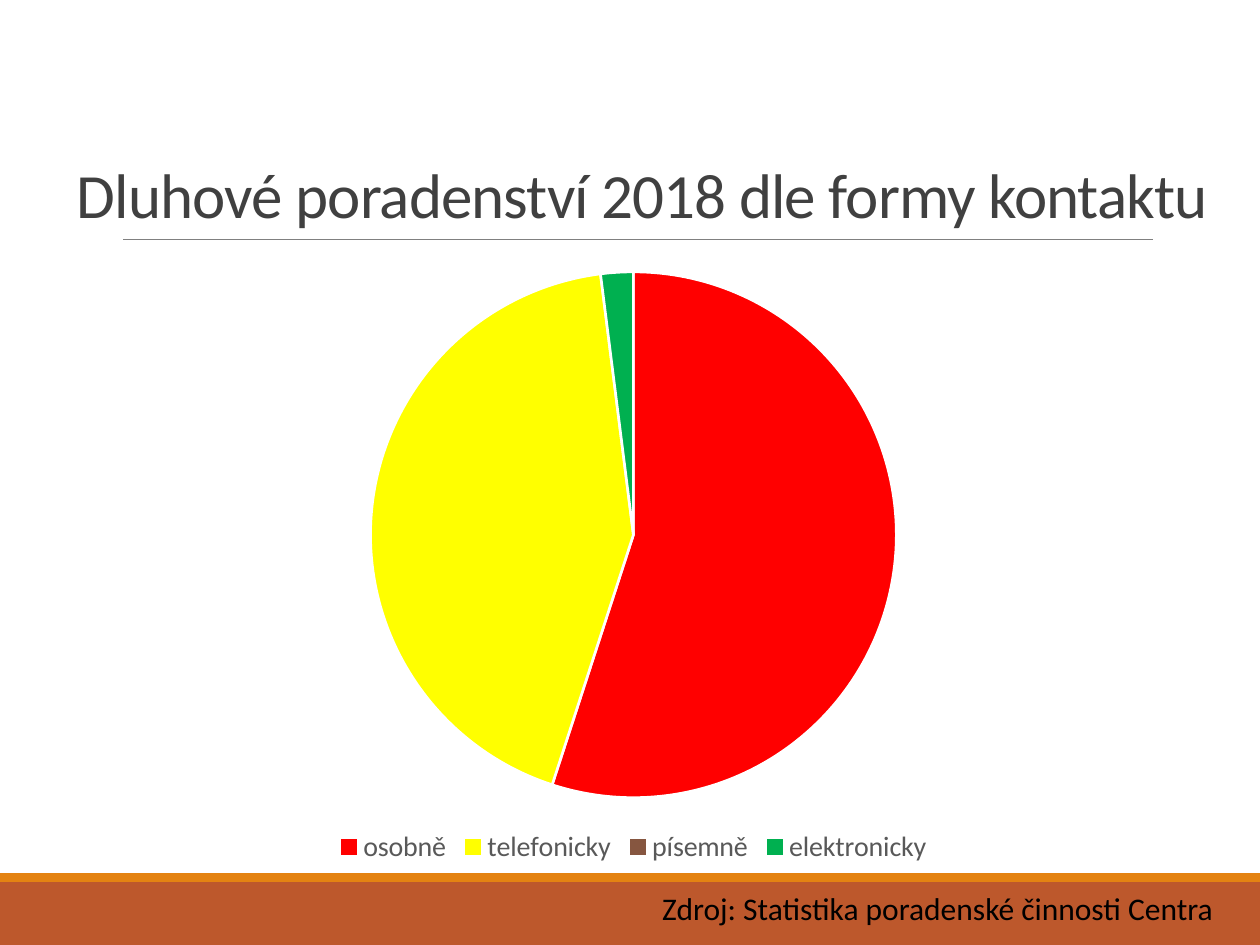
"""Build a slide with a pie chart of debt counselling by form of contact."""
from lxml.etree import SubElement
from pptx import Presentation
from pptx.chart.data import CategoryChartData
from pptx.dml.color import RGBColor as RGB
from pptx.enum.chart import XL_CHART_TYPE as CT, XL_LEGEND_POSITION as LP
from pptx.enum.shapes import MSO_CONNECTOR as MC, MSO_SHAPE as MS
from pptx.enum.text import MSO_ANCHOR as MA
from pptx.oxml.ns import qn
from pptx.util import Cm, Pt

TITLE = "Dluhové poradenství 2018 dle formy kontaktu"
SOURCE = "Zdroj: Statistika poradenské činnosti Centra"
CONTACTS = [
    ("osobně", 55, "FF0000"),
    ("telefonicky", 43, "FFFF00"),
    ("písemně", 0, "865640"),
    ("elektronicky", 2, "00B050"),
]
THEME = {
    "font": "Calibri", "title": "404040", "text": "000000", "legend": "595959",
    "band": "BD582C", "stripe": "E48312", "rule": "808080", "edge": "FFFFFF",
    "title_size": 36, "source_size": 18, "legend_size": 16,
}
WIDTH, HEIGHT = 25.4, 19.05
BAND_H, STRIPE_H = 1.27, 0.18


def style_font(font, size, color):
    font.name = THEME["font"]
    font.size = Pt(size)
    font.color.rgb = RGB.from_string(color)


def add_bar(s, y, h, color):
    sp = s.shapes.add_shape(MS.RECTANGLE, Cm(0), Cm(y), Cm(WIDTH), Cm(h))
    sp.shadow.inherit = False
    sp.fill.solid()
    sp.fill.fore_color.rgb = RGB.from_string(color)
    sp.line.fill.background()


def add_text(s, box, text, size, color, anchor=MA.TOP):
    tf = s.shapes.add_textbox(*map(Cm, box)).text_frame
    tf.word_wrap = True
    tf.vertical_anchor = anchor
    p = tf.paragraphs[0]
    r = p.add_run()
    r.text = text
    style_font(r.font, size, color)
    return p, r


def add_rule(s, x1, x2, y):
    line = s.shapes.add_connector(MC.STRAIGHT, Cm(x1), Cm(y), Cm(x2), Cm(y))
    line.line.color.rgb = RGB.from_string(THEME["rule"])
    line.line.width = Pt(0.5)
    SubElement(line._element.spPr, qn("a:effectLst"))


def add_pie(s, box):
    names, values, colors = zip(*CONTACTS)
    data = CategoryChartData()
    data.categories = names
    data.add_series("Series 1", values)
    chart = s.shapes.add_chart(CT.PIE, *map(Cm, box), data).chart
    style_font(chart.font, 10, THEME["text"])
    chart.has_title = False
    chart.has_legend = True
    chart.legend.position = LP.BOTTOM
    chart.legend.include_in_layout = False
    style_font(chart.legend.font, THEME["legend_size"], THEME["legend"])
    plot = chart.plots[0]
    plot.vary_by_categories = True
    for i, color in enumerate(colors):
        fmt = plot.series[0].points[i].format
        fmt.fill.solid()
        fmt.fill.fore_color.rgb = RGB.from_string(color)
        fmt.line.color.rgb = RGB.from_string(THEME["edge"])
        fmt.line.width = Pt(1.5)


def main():
    prs = Presentation()
    prs.slide_width, prs.slide_height = Cm(WIDTH), Cm(HEIGHT)
    s = prs.slides.add_slide(prs.slide_layouts[6])
    band_top = HEIGHT - BAND_H
    add_bar(s, band_top, BAND_H, THEME["band"])
    add_bar(s, band_top - STRIPE_H, STRIPE_H, THEME["stripe"])
    add_rule(s, 2.48, 23.24, 4.83)
    p, r = add_text(s, (1.3, 0.74, 23.6, 4.04), TITLE,
                    THEME["title_size"], THEME["title"], MA.BOTTOM)
    p.line_spacing = 0.85
    r._r.get_or_add_rPr().set("spc", "-50")
    add_pie(s, (2.29, 5.13, 20.96, 12.4))
    add_text(s, (13.1, 17.8, 13.6, 1.02), SOURCE,
             THEME["source_size"], THEME["text"])
    prs.save("out.pptx")


if __name__ == "__main__":
    main()
